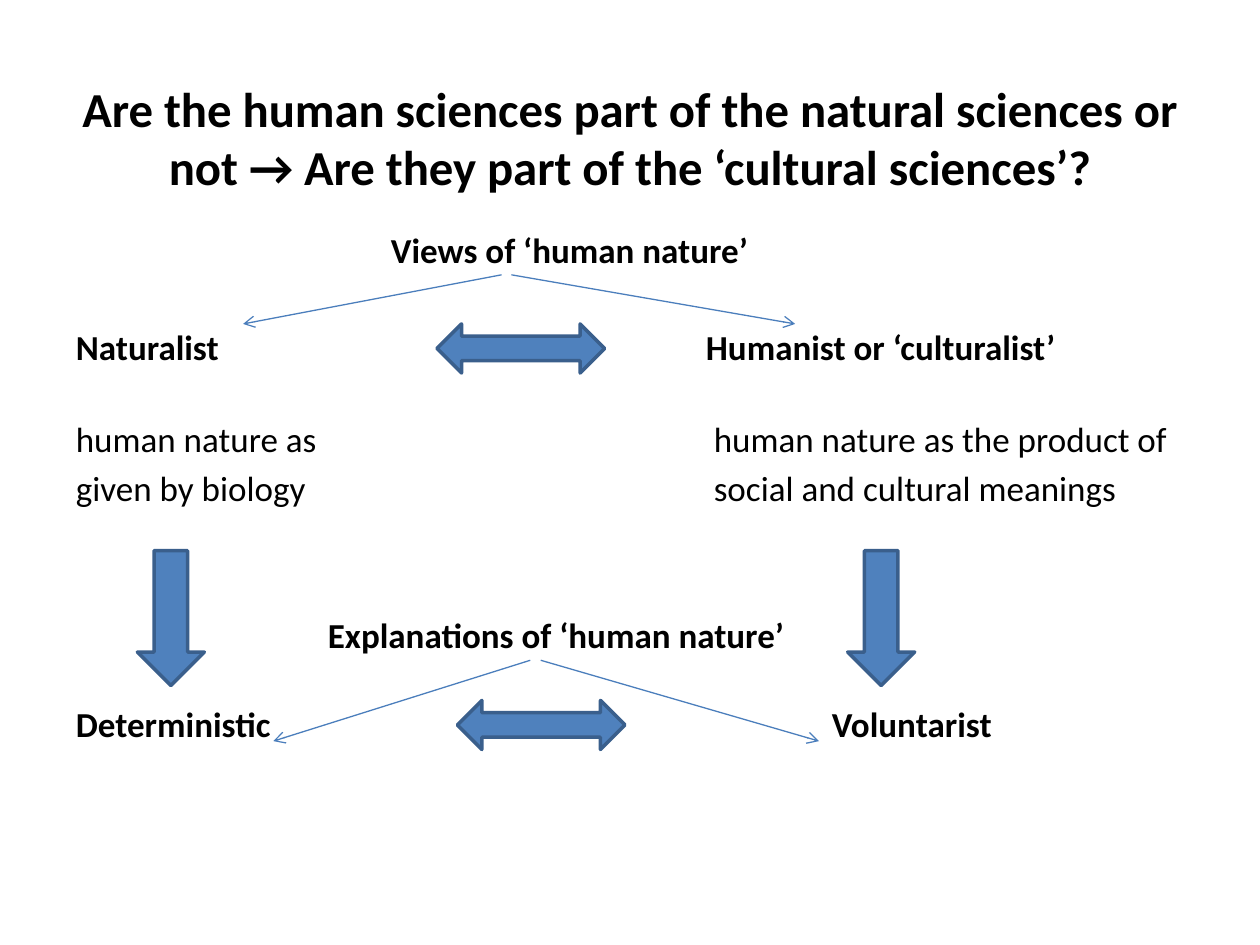
"""Build a slide contrasting naturalist and humanist views of human nature."""
import pptx
import pptx.dml.color
import pptx.enum.shapes
import pptx.enum.text
import pptx.oxml
import pptx.oxml.ns
import pptx.util
from pptx.util import Cm

COLORS = {"text": "000000", "fill": "4F81BD", "outline": "3A5F8C", "line": "4B7EBC"}
SHAPES = pptx.enum.shapes.MSO_SHAPE
ALIGN = pptx.enum.text.PP_ALIGN


def rgb(name):
    """Return the named colour."""
    return pptx.dml.color.RGBColor.from_string(COLORS[name])


def write(tf, text, size=20, bold=True, align=ALIGN.LEFT, after=0):
    """Write one formatted paragraph for each line of text."""
    tf.word_wrap = True
    for i, line in enumerate(text.split("\n")):
        p = tf.add_paragraph() if i else tf.paragraphs[0]
        p.alignment = align
        p.space_before, p.space_after = pptx.util.Pt(0), pptx.util.Pt(after)
        r = p.add_run()
        r.text = line
        r.font.name, r.font.size, r.font.bold = "Calibri", pptx.util.Pt(size), bold
        r.font.color.rgb = rgb("text")


def add_title(s, text):
    """Place and fill the title placeholder."""
    sp = s.shapes.title
    sp.left, sp.top, sp.width, sp.height = Cm(1.27), Cm(0.76), Cm(22.86), Cm(3.18)
    tf = sp.text_frame
    tf.auto_size = pptx.enum.text.MSO_AUTO_SIZE.NONE
    tf.vertical_anchor = pptx.enum.text.MSO_ANCHOR.BOTTOM
    tf.margin_bottom = 0
    write(tf, text, size=27.9, align=ALIGN.CENTER)


def add_label(s, text, x, y, w, **fmt):
    """Add a text box without insets."""
    h = 0.98 * len(text.split("\n"))
    tf = s.shapes.add_textbox(Cm(x), Cm(y), Cm(w), Cm(h)).text_frame
    tf.margin_left = tf.margin_right = tf.margin_top = tf.margin_bottom = 0
    write(tf, text, **fmt)


def add_block_arrow(s, kind, x, y, w, h):
    """Add a filled block arrow."""
    sp = s.shapes.add_shape(kind, Cm(x), Cm(y), Cm(w), Cm(h))
    sp.shadow.inherit = False
    sp.fill.solid()
    sp.fill.fore_color.rgb = rgb("fill")
    sp.line.color.rgb = rgb("outline")
    sp.line.width = pptx.util.Pt(2)


def add_branch(s, x1, y1, x2, y2):
    """Add a thin line with an open arrowhead at its end."""
    straight = pptx.enum.shapes.MSO_CONNECTOR.STRAIGHT
    cx = s.shapes.add_connector(straight, Cm(x1), Cm(y1), Cm(x2), Cm(y2))
    cx.line.color.rgb = rgb("line")
    cx.line.width = pptx.util.Pt(0.75)
    ns = pptx.oxml.ns.nsdecls("a")
    cx.line._get_or_add_ln().append(
        pptx.oxml.parse_xml(f'<a:tailEnd {ns} type="arrow"/>'))
    cx._element.spPr.append(pptx.oxml.parse_xml(f"<a:effectLst {ns}/>"))


def main():
    """Build and save the slide."""
    prs = pptx.Presentation()
    prs.slide_width, prs.slide_height = Cm(25.4), Cm(19.05)
    s = prs.slides.add_slide(prs.slide_layouts[5])
    add_title(s, "Are the human sciences part of the natural sciences or not "
                 "→ Are they part of the ‘cultural sciences’?")

    for text, x, y, w in [
        ("Views of ‘human nature’", 7.88, 4.6, 7.5),
        ("Naturalist", 1.53, 6.57, 3.2),
        ("Humanist or ‘culturalist’", 14.23, 6.57, 7.4),
        ("Explanations of ‘human nature’", 6.61, 12.36, 9.6),
        ("Deterministic", 1.53, 14.17, 4.3),
        ("Voluntarist", 16.77, 14.17, 3.6),
    ]:
        add_label(s, text, x, y, w)
    for text, x, w in [
        ("human nature as\ngiven by biology", 1.53, 5.3),
        ("human nature as the product of\nsocial and cultural meanings", 14.39, 9.6),
    ]:
        add_label(s, text, x, 8.41, w, bold=False, after=4)

    for x in (2.77, 17.09):
        add_block_arrow(s, SHAPES.DOWN_ARROW, x, 11.1, 1.35, 2.72)
    for x1, y1, x2, y2 in [
        (10.31, 5.54, 16.03, 6.53),
        (10.11, 5.54, 4.9, 6.53),
        (10.9, 13.31, 16.51, 14.94),
        (10.69, 13.31, 5.51, 14.94),
    ]:
        add_branch(s, x1, y1, x2, y2)
    for x, y in [(8.81, 6.53), (9.22, 14.12)]:
        add_block_arrow(s, SHAPES.LEFT_RIGHT_ARROW, x, y, 3.38, 0.99)

    prs.save("out.pptx")


if __name__ == "__main__":
    main()
